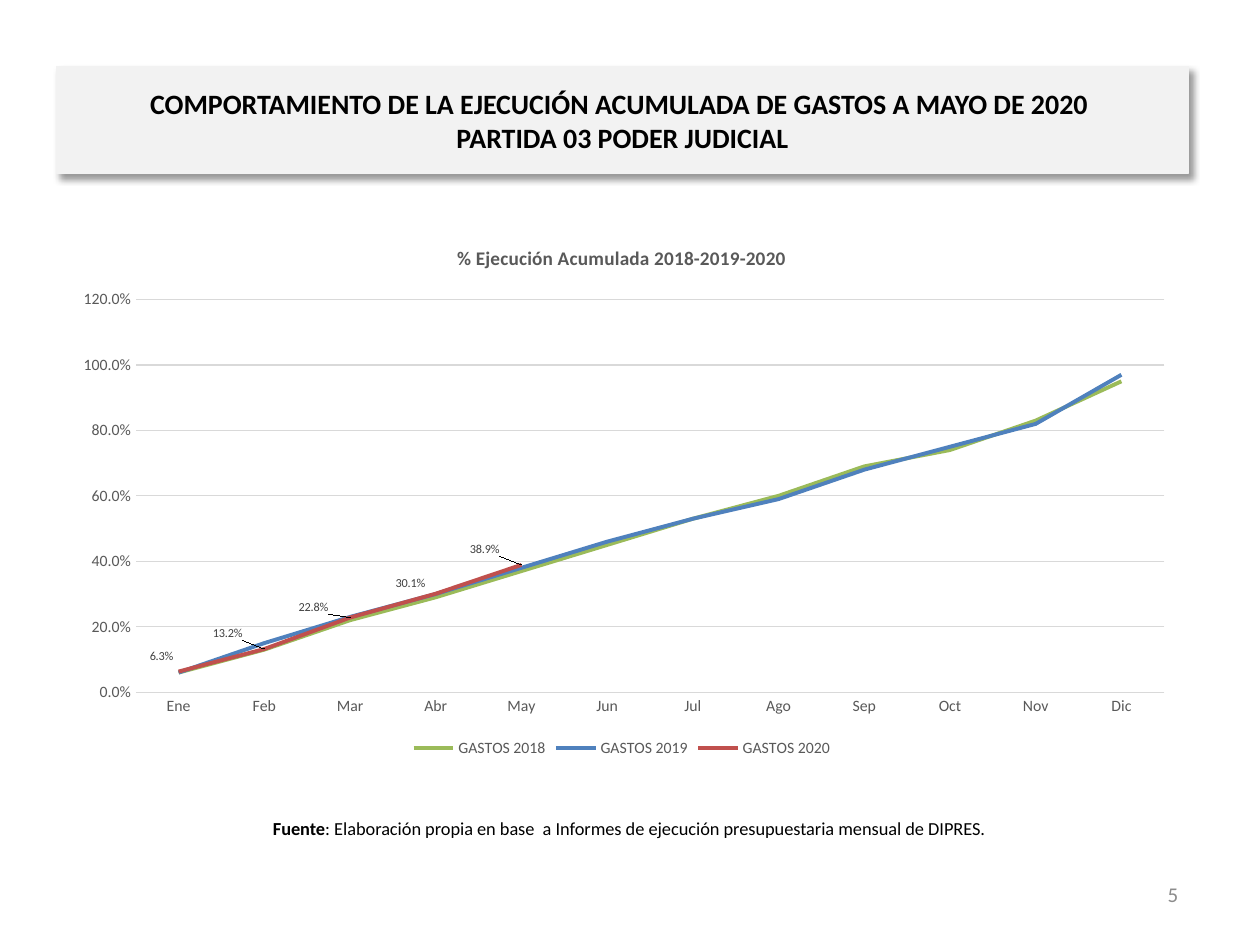
from lxml.etree import SubElement
from pptx import Presentation
from pptx.chart.data import CategoryChartData
from pptx.dml.color import RGBColor
from pptx.enum.chart import XL_CHART_TYPE, XL_LEGEND_POSITION, XL_TICK_MARK
from pptx.enum.text import MSO_ANCHOR, PP_ALIGN
from pptx.oxml import parse_xml
from pptx.oxml.ns import nsdecls, qn
from pptx.util import Inches, Pt

FONT = "Calibri"
BLACK = RGBColor(0x00, 0x00, 0x00)
PALE = RGBColor(0xF2, 0xF2, 0xF2)
GRID = RGBColor(0xD9, 0xD9, 0xD9)
GRAY = RGBColor(0x59, 0x59, 0x59)
DARK = RGBColor(0x40, 0x40, 0x40)
MUTED = RGBColor(0x8C, 0x8C, 0x8C)
GREEN = RGBColor(0x9B, 0xBB, 0x59)
BLUE = RGBColor(0x4F, 0x81, 0xBD)
RED = RGBColor(0xC0, 0x50, 0x4D)

TITLE = ("COMPORTAMIENTO DE LA EJECUCIÓN ACUMULADA DE GASTOS A MAYO DE 2020 \v"
         "PARTIDA 03 PODER JUDICIAL")
SOURCE = [("Fuente", True),
          (": Elaboración propia en base  a Informes de ejecución "
           "presupuestaria mensual de DIPRES.", False)]
CHART_TITLE = "% Ejecución Acumulada 2018-2019-2020"
MONTHS = ["Ene", "Feb", "Mar", "Abr", "May", "Jun",
          "Jul", "Ago", "Sep", "Oct", "Nov", "Dic"]
SERIES = [
    ("GASTOS 2018", GREEN, [0.06, 0.13, 0.22, 0.29, 0.37, 0.45,
                            0.53, 0.6, 0.69, 0.74, 0.83, 0.95]),
    ("GASTOS 2019", BLUE, [0.06, 0.15, 0.23, 0.3, 0.38, 0.46,
                           0.53, 0.59, 0.68, 0.75, 0.82, 0.97]),
    ("GASTOS 2020", RED, [0.063, 0.132, 0.228, 0.301, 0.389]),
]
# Label shifts as shares of the chart's width and height
SHIFTS = [(-0.03, -0.03), (-0.05, -0.03), (-0.05, -0.02),
          (-0.04, -0.02), (-0.05, -0.03)]
PERCENT = "0.0%"


def style(font, size, color, bold=False):
    font.name, font.size, font.bold = FONT, Pt(size), bold
    font.color.rgb = color


def add_text(slide, box, runs, size, color, align):
    frame = slide.shapes.add_textbox(*map(Inches, box)).text_frame
    frame.word_wrap = True
    frame.vertical_anchor = MSO_ANCHOR.MIDDLE
    para = frame.paragraphs[0]
    para.alignment = align
    for text, bold in runs:
        run = para.add_run()
        run.text = text
        style(run.font, size, color, bold)


def add_layout(**parts):
    layout = parse_xml(f"<c:layout {nsdecls('c')}/>")
    manual = SubElement(layout, qn("c:manualLayout"))
    for tag, val in parts.items():
        SubElement(manual, qn("c:" + tag)).set("val", str(val))
    return layout


def set_title(slide):
    title = slide.shapes.title
    title.left, title.top, title.width, title.height = map(
        Inches, (0.45, 0.53, 8.98, 0.85))
    title.fill.solid()
    title.fill.fore_color.rgb = PALE
    title.line.color.rgb = PALE
    title.line.width = Pt(0.75)
    title._element.spPr.append(parse_xml(
        f'<a:effectLst {nsdecls("a")}><a:outerShdw blurRad="{Pt(4)}" '
        f'dist="{Pt(3)}" dir="2700000" algn="tl" rotWithShape="0">'
        '<a:srgbClr val="000000"><a:alpha val="40000"/></a:srgbClr>'
        '</a:outerShdw></a:effectLst>'))
    frame = title.text_frame
    frame.text = TITLE
    frame.word_wrap = True
    frame.vertical_anchor = MSO_ANCHOR.MIDDLE
    para = frame.paragraphs[0]
    para.alignment = PP_ALIGN.CENTER
    for run in para.runs:
        style(run.font, 16, BLACK, True)


def set_axes(chart):
    months, share = chart.category_axis, chart.value_axis
    for axis in (months, share):
        axis.major_tick_mark = axis.minor_tick_mark = XL_TICK_MARK.NONE
        style(axis.tick_labels.font, 9, GRAY)
    months.format.line.color.rgb = GRID
    months.format.line.width = Pt(0.75)
    share.format.line.fill.background()
    share.minimum_scale, share.maximum_scale, share.major_unit = 0, 1.2, 0.2
    share.tick_labels.number_format = PERCENT
    share.tick_labels.number_format_is_linked = False
    share.has_major_gridlines = True
    share.major_gridlines.format.line.color.rgb = GRID
    share.major_gridlines.format.line.width = Pt(0.75)


def label_points(line):
    labels = line.data_labels
    labels.show_value = True
    labels.number_format = PERCENT
    labels.number_format_is_linked = False
    style(labels.font, 7, DARK)
    for i, (dx, dy) in enumerate(SHIFTS):
        style(line.points[i].data_label.font, 7, DARK)
        idx = line._element.xpath(f"c:dLbls/c:dLbl/c:idx[@val='{i}']")[0]
        idx.addnext(parse_xml(f'<c:numFmt {nsdecls("c")} '
                              f'formatCode="{PERCENT}" sourceLinked="0"/>'))
        idx.addnext(add_layout(x=dx, y=dy))


def add_lines(slide):
    data = CategoryChartData(number_format=PERCENT)
    data.categories = MONTHS
    for name, _, vals in SERIES:
        data.add_series(name, vals + [None] * (len(MONTHS) - len(vals)))
    chart = slide.shapes.add_chart(
        XL_CHART_TYPE.LINE, *map(Inches, (0.45, 1.78, 8.97, 4.27)), data).chart
    style(chart.font, 10, BLACK)
    chart.has_title = True
    run = chart.chart_title.text_frame.paragraphs[0].add_run()
    run.text = CHART_TITLE
    style(run.font, 11, GRAY, True)
    chart.has_legend = True
    chart.legend.position = XL_LEGEND_POSITION.BOTTOM
    chart.legend.include_in_layout = False
    style(chart.legend.font, 9, GRAY)
    set_axes(chart)

    area = chart._chartSpace.chart.plotArea
    for old in area.findall(qn("c:layout")):
        area.remove(old)
    area.insert(0, add_layout(layoutTarget="inner", xMode="edge", yMode="edge",
                              x=0.07, y=0.14, w=0.91, h=0.73))
    plot = chart.plots[0]
    plot.vary_by_categories = False
    for line, (_, color, _) in zip(plot.series, SERIES):
        line.smooth = False
        line.format.line.color.rgb = color
        line.format.line.width = Pt(2.25)
    label_points(plot.series[-1])


def main():
    deck = Presentation()
    deck.slide_width, deck.slide_height = Inches(10), Inches(7.5)
    slide = deck.slides.add_slide(deck.slide_layouts[5])
    set_title(slide)
    add_lines(slide)
    add_text(slide, (0.4, 6.37, 9.19, 0.4), SOURCE, 10.5, BLACK,
             PP_ALIGN.CENTER)
    add_text(slide, (7.12, 6.9, 2.33, 0.4), [("5", False)], 12, MUTED,
             PP_ALIGN.RIGHT)
    deck.save("out.pptx")


if __name__ == "__main__":
    main()
